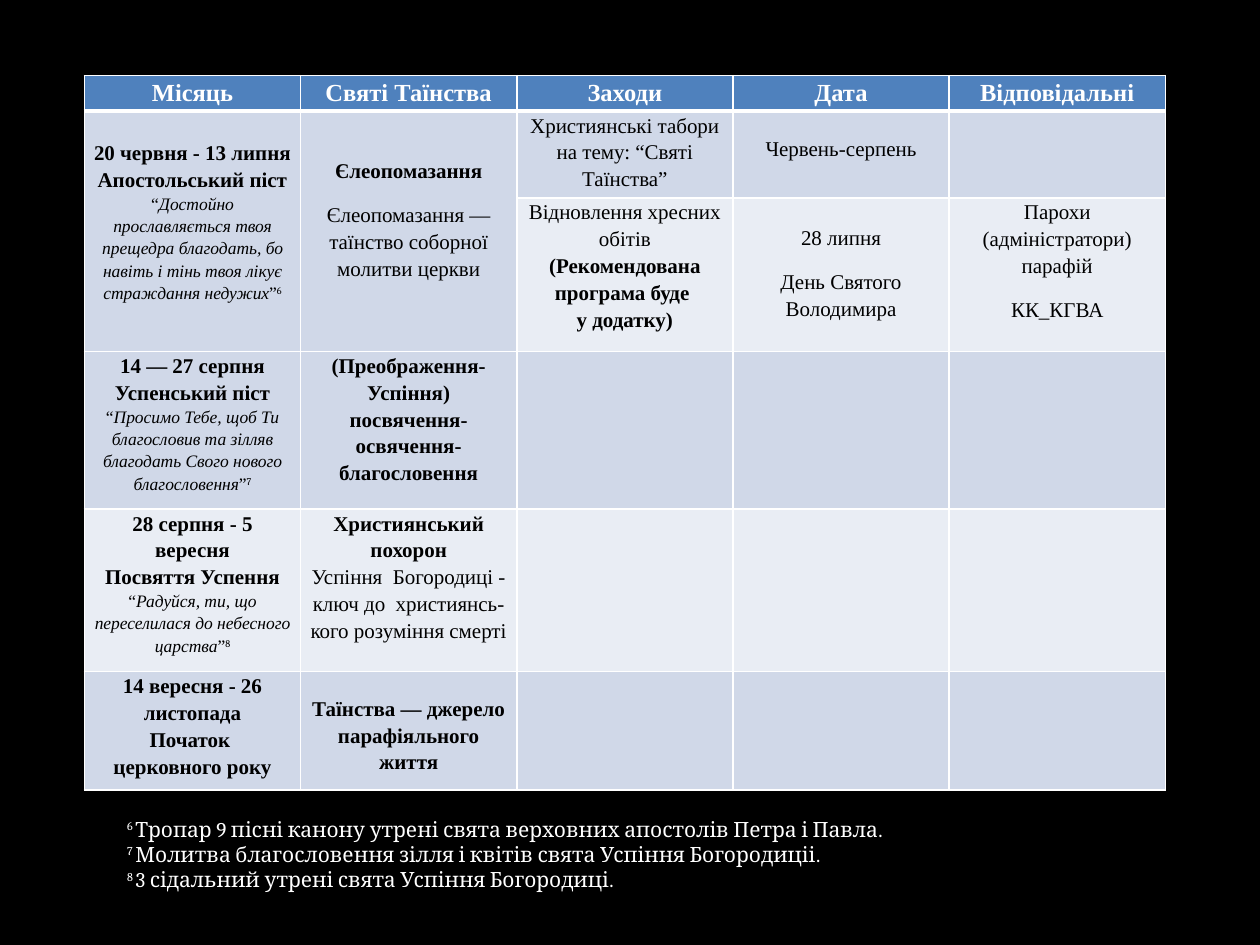
from copy import deepcopy
from itertools import product

from lxml.etree import SubElement, fromstring
from pptx import Presentation
from pptx.dml.color import RGBColor as Color
from pptx.enum.text import MSO_AUTO_SIZE as AutoSize, PP_ALIGN as Align
from pptx.oxml.ns import nsdecls, qn
from pptx.util import Inches, Pt

COLORS = {"back": "000000", "ink": "000000", "light": "FFFFFF",
          "header": "4F81BD", "band": "D0D8E8", "pale": "E9EDF4"}
WIDTH, HEIGHT = Inches(10), Inches(7.5)
BOLD = {"bold": True}


def write(para, text, size=12, font="Times New Roman", color="ink",
          bold=False, italic=False, raised=False):
    for index, line in enumerate(text.split("\n")):
        if index:
            para.add_line_break()
            para._p[-1].append(deepcopy(span._r.rPr))
        if line:
            span = para.add_run()
            span.text = line
            span.font.size = Pt(size)
            span.font.name = font
            span.font.bold = bold
            span.font.italic = italic
            span.font.color.rgb = Color.from_string(COLORS[color])
            if raised:
                span._r.rPr.set("baseline", "30000")


def quote(text, mark):
    return [("“", {"size": 10}), (text, {"size": 10, "italic": True}),
            ("”", {"size": 10}),
            (mark, {"size": 10, "font": "Cambria", "raised": True})]


headers = ["Місяць", "Святі Таїнства", "Заходи", "Дата", "Відповідальні"]
row_heights = [0.28, 0.69, 1.22, 1.25, 1.29, 0.94]
row_fills = ["header", "band", "pale", "band", "pale", "band"]
top_gaps = {(1, 0): 0.22, (1, 1): 0.36, (1, 3): 0.19, (2, 3): 0.2, (5, 1): 0.18}
tight_paras = {(4, 0): 3, (4, 1): 1}

contents = {
    (1, 0): [[("20 червня - 13 липня\nАпостольський піст\n", BOLD),
              *quote("Достойно прославляється твоя прещедра благодать, бо "
                     "навіть і тінь твоя лікує страждання недужих", "6")]],
    (1, 1): [[("Єлеопомазання", BOLD)],
             [("Єлеопомазання — таїнство соборної молитви церкви", {})]],
    (1, 2): [[("Християнські табори на тему: “Святі Таїнства”", {})]],
    (1, 3): [[("Червень-серпень", {})]],
    (2, 2): [[("Відновлення хресних обітів\n", {}),
              ("(Рекомендована програма буде \nу додатку)", BOLD)]],
    (2, 3): [[("28 липня", {})], [("День Святого Володимира", {})]],
    (2, 4): [[("Парохи (адміністратори) парафій", {})], [("КК_КГВА", {})]],
    (3, 0): [[("14 — 27 серпня\nУспенський піст\n", BOLD),
              *quote("Просимо Тебе, щоб Ти благословив та зілляв благодать "
                     "Свого нового благословення", "7")]],
    (3, 1): [[("(Преображення-Успіння)\nпосвячення-освячення-благословення", BOLD)]],
    (4, 0): [[("28 серпня - 5 вересня", BOLD)], [("Посвяття Успення", BOLD)],
             quote("Радуйся, ти, що переселилася до небесного царства", "8")],
    (4, 1): [[("Християнський похорон", BOLD)],
             [("Успіння  Богородиці - ключ до  християнсь-кого розуміння смерті", {})]],
    (5, 0): [[("14 вересня - 26 листопада\nПочаток \nцерковного року", BOLD)]],
    (5, 1): [[("Таїнства — джерело парафіяльного життя", BOLD)]],
}
for column, header in enumerate(headers):
    contents[0, column] = [[(header, {"size": 14, "color": "light", "bold": True})]]

deck = Presentation()
deck.slide_width, deck.slide_height = WIDTH, HEIGHT
page = deck.slides.add_slide(deck.slide_layouts[6])
page.background.fill.solid()
page.background.fill.fore_color.rgb = Color.from_string(COLORS["back"])

table = page.shapes.add_table(
    len(row_heights), len(headers), int(WIDTH * 0.067), int(HEIGHT * 0.08),
    int(WIDTH * 0.858), Inches(sum(row_heights))).table
for row, height in zip(table.rows, row_heights):
    row.height = Inches(height)
for column in range(2):
    table.cell(1, column).merge(table.cell(2, column))

for row, column in product(range(len(row_heights)), range(len(headers))):
    cell = table.cell(row, column)
    cell.margin_left = cell.margin_right = Inches(0.07)
    cell.margin_top = Inches(top_gaps.get((row, column), 0))
    cell.margin_bottom = 0
    cell.fill.solid()
    cell.fill.fore_color.rgb = Color.from_string(COLORS[row_fills[row]])

    for index, side in enumerate("LRTB"):
        thick = (row, side) in [(0, "B"), (1, "T")]
        border = fromstring(
            f'<a:ln{side} {nsdecls("a")} w="{Pt(3 if thick else 1)}"><a:solidFill>'
            f'<a:srgbClr val="{COLORS["light"]}"/></a:solidFill></a:ln{side}>')
        cell._tc.get_or_add_tcPr().insert(index, border)

    paras = contents.get((row, column), [])
    for index, spans in enumerate(paras):
        para = cell.text_frame.add_paragraph() if index else cell.text_frame.paragraphs[0]
        para.alignment = Align.CENTER
        para.line_spacing = 1.15
        para.space_after = Pt(0 if index < tight_paras.get((row, column), 0) else 10)
        for text, style in spans:
            write(para, text, **style)

notes = ["Тропар 9 пісні канону утрені свята верховних апостолів Петра і Павла.",
         "Молитва благословення зілля і квітів свята Успіння Богородиціі.",
         "3 сідальний утрені свята Успіння Богородиці."]
box = page.shapes.add_textbox(int(WIDTH * 0.091), int(HEIGHT * 0.857),
                              int(WIDTH * 0.811), int(HEIGHT * 0.095))
box.text_frame.word_wrap = True
box.text_frame.auto_size = AutoSize.SHAPE_TO_FIT_TEXT
for index, note in enumerate(notes):
    para = box.text_frame.add_paragraph() if index else box.text_frame.paragraphs[0]
    write(para, f"{index + 6} ", font="Cambria", color="light", raised=True)
    write(para, note, font="Cambria", color="light")

deck.save("out.pptx")
